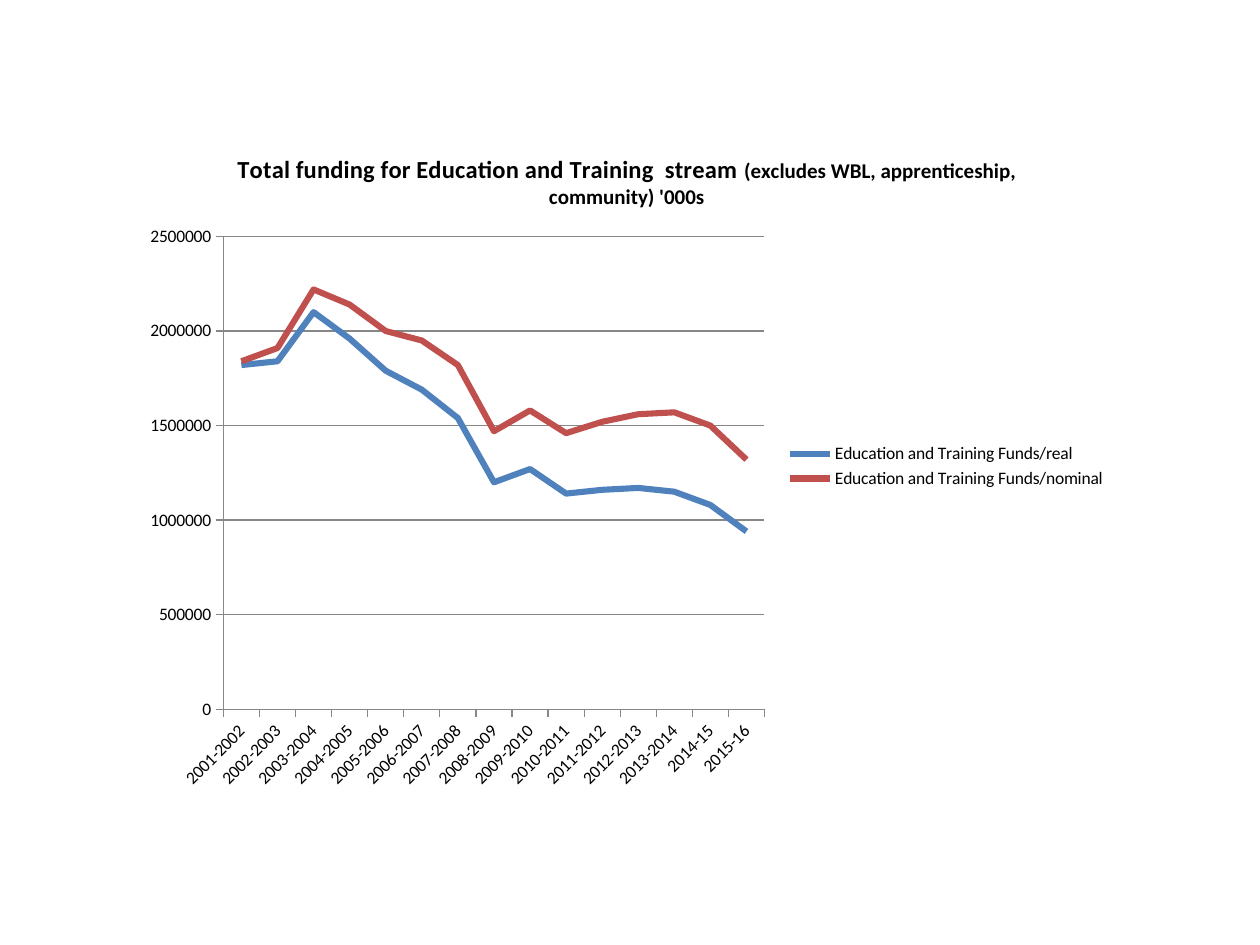
"""Build a slide with a line chart of education and training funding."""
from dataclasses import dataclass

from lxml import etree
from pptx import Presentation
from pptx import util as u
from pptx.chart.data import CategoryChartData
from pptx.dml.color import RGBColor
from pptx.enum import chart as kinds
from pptx.oxml import ns


@dataclass(frozen=True)
class Theme:
    font: str = "Calibri"
    ink: str = "000000"
    grid: str = "878787"
    real: str = "4F81BD"
    nominal: str = "C0504D"
    head: float = 14
    note: float = 12
    body: float = 10
    thin: float = 0.75
    thick: float = 3.5


THEME = Theme()
YEARS = [f"{y}-{y + 1}" for y in range(2001, 2014)] + ["2014-15", "2015-16"]
FUNDS = [
    ("real", THEME.real,
     [1820, 1840, 2100, 1960, 1790, 1690, 1540, 1200,
      1270, 1140, 1160, 1170, 1150, 1080, 940]),
    ("nominal", THEME.nominal,
     [1840, 1910, 2220, 2140, 2000, 1950, 1820, 1470,
      1580, 1460, 1520, 1560, 1570, 1500, 1320]),
]
TITLE = [
    ("Total funding for Education and Training  stream ", THEME.head),
    ("(excludes WBL, apprenticeship, community) '000s", THEME.note),
]


def style_font(font, size, bold=False):
    font.name = THEME.font
    font.size = u.Pt(size)
    font.bold = bold
    font.color.rgb = RGBColor.from_string(THEME.ink)


def style_line(line, color, width):
    line.color.rgb = RGBColor.from_string(color)
    line.width = u.Pt(width)


def add_chart(slide):
    data = CategoryChartData(number_format="General")
    data.categories = YEARS
    for name, _, vals in FUNDS:
        data.add_series(f"Education and Training Funds/{name}",
                        [val * 1000 for val in vals])
    frame = slide.shapes.add_chart(
        kinds.XL_CHART_TYPE.LINE, u.Inches(1.07), u.Inches(1.02),
        u.Inches(7.81), u.Inches(5.36), data)
    chart = frame.chart
    style_font(chart.font, THEME.body)
    return chart


def add_title(chart):
    chart.has_title = True
    para = chart.chart_title.text_frame.paragraphs[0]
    for words, size in TITLE:
        run = para.add_run()
        run.text = words
        style_font(run.font, size, bold=True)
    chart.chart_title.include_in_layout = False


def style_axes(chart):
    for axis in (chart.category_axis, chart.value_axis):
        axis.major_tick_mark = kinds.XL_TICK_MARK.OUTSIDE
        axis.minor_tick_mark = kinds.XL_TICK_MARK.NONE
        style_line(axis.format.line, THEME.grid, THEME.thin)
    axis = chart.value_axis
    axis.minimum_scale, axis.maximum_scale = 0, 2500000
    axis.major_unit = 500000
    axis.has_major_gridlines = True
    style_line(axis.major_gridlines.format.line, THEME.grid, THEME.thin)


def style_series(chart):
    for line, (_, color, _) in zip(chart.plots[0].series, FUNDS):
        line.smooth = False
        line.marker.style = kinds.XL_MARKER_STYLE.NONE
        style_line(line.format.line, color, THEME.thick)


def add_legend(chart):
    chart.has_legend = True
    chart.legend.position = kinds.XL_LEGEND_POSITION.RIGHT
    chart.legend.include_in_layout = False
    style_font(chart.legend.font, THEME.body)


def place_plot(chart, left, top, width, height):
    """Fix the inner plot area as fractions of the chart."""
    area = chart.element.find(".//" + ns.qn("c:plotArea"))
    for old in area.findall(ns.qn("c:layout")):
        area.remove(old)
    layout = etree.Element(ns.qn("c:layout"))
    area.insert(0, layout)
    manual = etree.SubElement(layout, ns.qn("c:manualLayout"))
    marks = {"layoutTarget": "inner", "xMode": "edge", "yMode": "edge",
             "x": left, "y": top, "w": width, "h": height}
    for tag, val in marks.items():
        etree.SubElement(manual, ns.qn(f"c:{tag}"), val=str(val))


def main():
    deck = Presentation()
    deck.slide_width, deck.slide_height = u.Inches(10), u.Inches(7.5)
    slide = deck.slides.add_slide(deck.slide_layouts[6])
    chart = add_chart(slide)
    add_title(chart)
    style_axes(chart)
    style_series(chart)
    add_legend(chart)
    place_plot(chart, 0.09, 0.16, 0.55, 0.7)
    deck.save("out.pptx")


if __name__ == "__main__":
    main()
